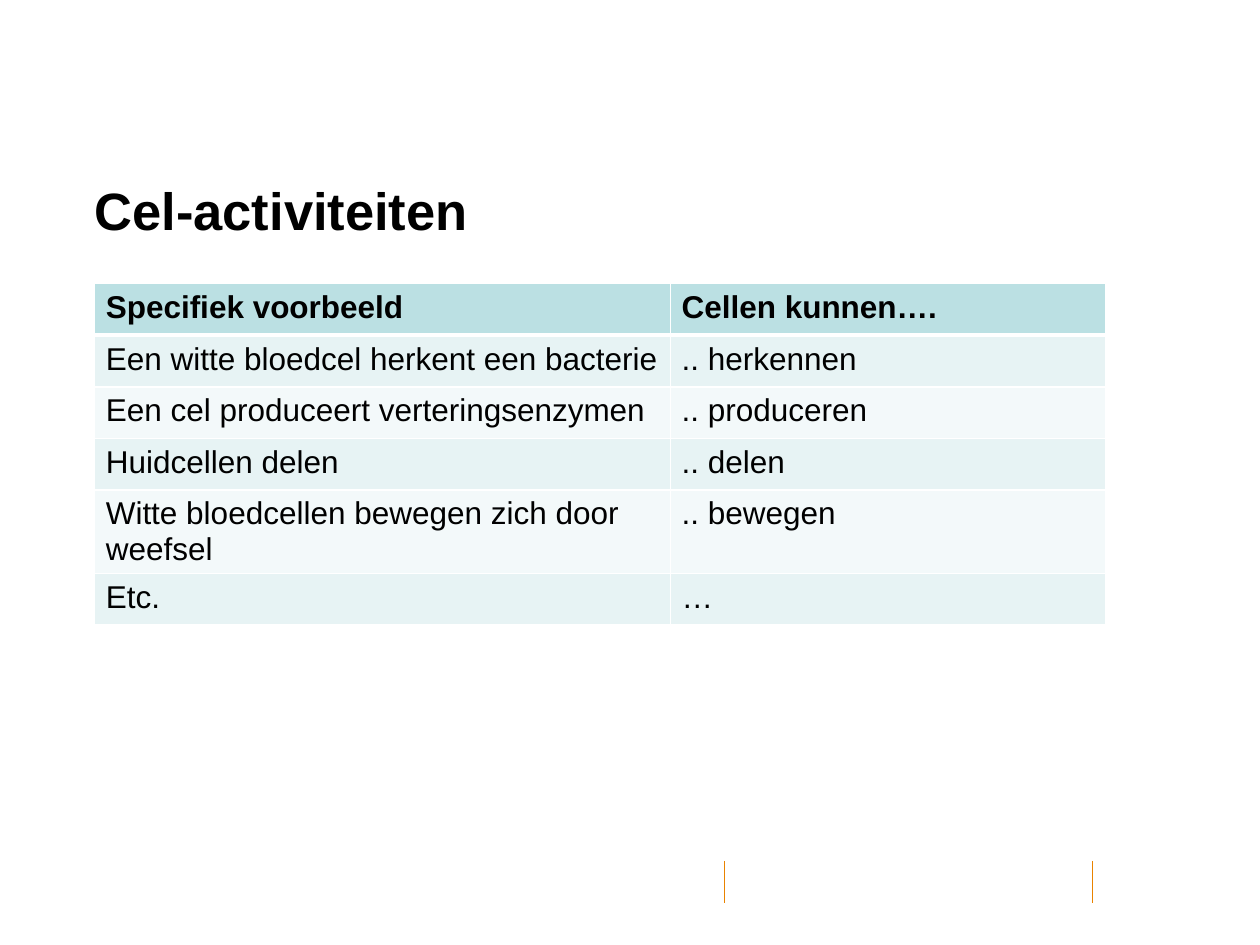
from pptx import Presentation
from pptx.dml.color import RGBColor
from pptx.enum.shapes import MSO_CONNECTOR
from pptx.enum.text import MSO_ANCHOR, PP_ALIGN
from pptx.oxml.ns import qn
from pptx.util import Inches, Pt
from lxml import etree

STRAIGHT = MSO_CONNECTOR.STRAIGHT
TOP = MSO_ANCHOR.TOP
LEFT = PP_ALIGN.LEFT

WIDTH, HEIGHT = 10, 7.5
TITLE_ONLY = 5
ROWS = [
    ("Specifiek voorbeeld", "Cellen kunnen…."),
    ("Een witte bloedcel herkent een bacterie", ".. herkennen"),
    ("Een cel produceert verteringsenzymen", ".. produceren"),
    ("Huidcellen delen", ".. delen"),
    ("Witte bloedcellen bewegen zich door weefsel", ".. bewegen"),
    ("Etc.", "…"),
]


def color(value):
    return RGBColor.from_string(value)


def write(frame, text, size=18, bold=False, ink="000000", font="Arial"):
    para = frame.paragraphs[0]
    para.alignment = LEFT
    span = para.add_run()
    span.text = text
    span.font.name = font
    span.font.size = Pt(size)
    span.font.bold = bold
    span.font.color.rgb = color(ink)


class Page:
    accent = "E98300"
    header = "BBE0E3"
    bands = ("E7F3F4", "F3F9FA")
    border = "FFFFFF"
    padding = 0.09

    def __init__(self, deck):
        self.slide = deck.slides.add_slide(deck.slide_layouts[TITLE_ONLY])

    def across(self, share):
        return Inches(WIDTH * share)

    def down(self, share):
        return Inches(HEIGHT * share)

    def title(self, text, left, top, width, height):
        box = self.slide.shapes.title
        box.left, box.top = self.across(left), self.down(top)
        box.width, box.height = self.across(width), self.down(height)
        frame = box.text_frame
        frame.margin_left = frame.margin_right = 0
        frame.margin_top = frame.margin_bottom = 0
        frame.vertical_anchor = TOP
        frame.word_wrap = True
        write(frame, text, size=30, bold=True)

    def divider(self, x, top, bottom):
        line = self.slide.shapes.add_connector(
            STRAIGHT, self.across(x), self.down(top), self.across(x), self.down(bottom))
        line.line.color.rgb = color(self.accent)
        line.line.width = Pt(0.75)
        etree.SubElement(line._element.spPr, qn("a:effectLst"))

    def edges(self, cell, bottom):
        properties = cell._tc.get_or_add_tcPr()
        widths = {"a:lnL": 1, "a:lnR": 1, "a:lnT": 1, "a:lnB": bottom}
        for place, (tag, width) in enumerate(widths.items()):
            edge = etree.Element(qn(tag), w=str(Pt(width)))
            fill = etree.SubElement(edge, qn("a:solidFill"))
            etree.SubElement(fill, qn("a:srgbClr"), val=self.border)
            properties.insert(place, edge)

    def table(self, rows, left, top, columns, row_height):
        table = self.slide.shapes.add_table(
            len(rows), len(columns), self.across(left), self.down(top),
            self.across(sum(columns)), Inches(row_height * len(rows))).table
        for column, share in zip(table.columns, columns):
            column.width = self.across(share)
        for index, texts in enumerate(rows):
            heading = index == 0
            table.rows[index].height = Inches(row_height)
            for cell, text in zip(table.rows[index].cells, texts):
                cell.margin_left = cell.margin_right = Inches(self.padding)
                cell.fill.solid()
                shade = self.header if heading else self.bands[(index - 1) % 2]
                cell.fill.fore_color.rgb = color(shade)
                self.edges(cell, bottom=3 if heading else 1)
                write(cell.text_frame, text, bold=heading)


def main():
    deck = Presentation()
    deck.slide_width, deck.slide_height = Inches(WIDTH), Inches(HEIGHT)
    page = Page(deck)
    for x in (0.867, 0.575):
        page.divider(x, top=0.911, bottom=0.956)
    page.title("Cel-activiteiten", left=0.075, top=0.188, width=0.808, height=0.123)
    page.table(ROWS, left=0.075, top=0.3, columns=(0.457, 0.346), row_height=0.41)
    deck.save("out.pptx")


if __name__ == "__main__":
    main()
